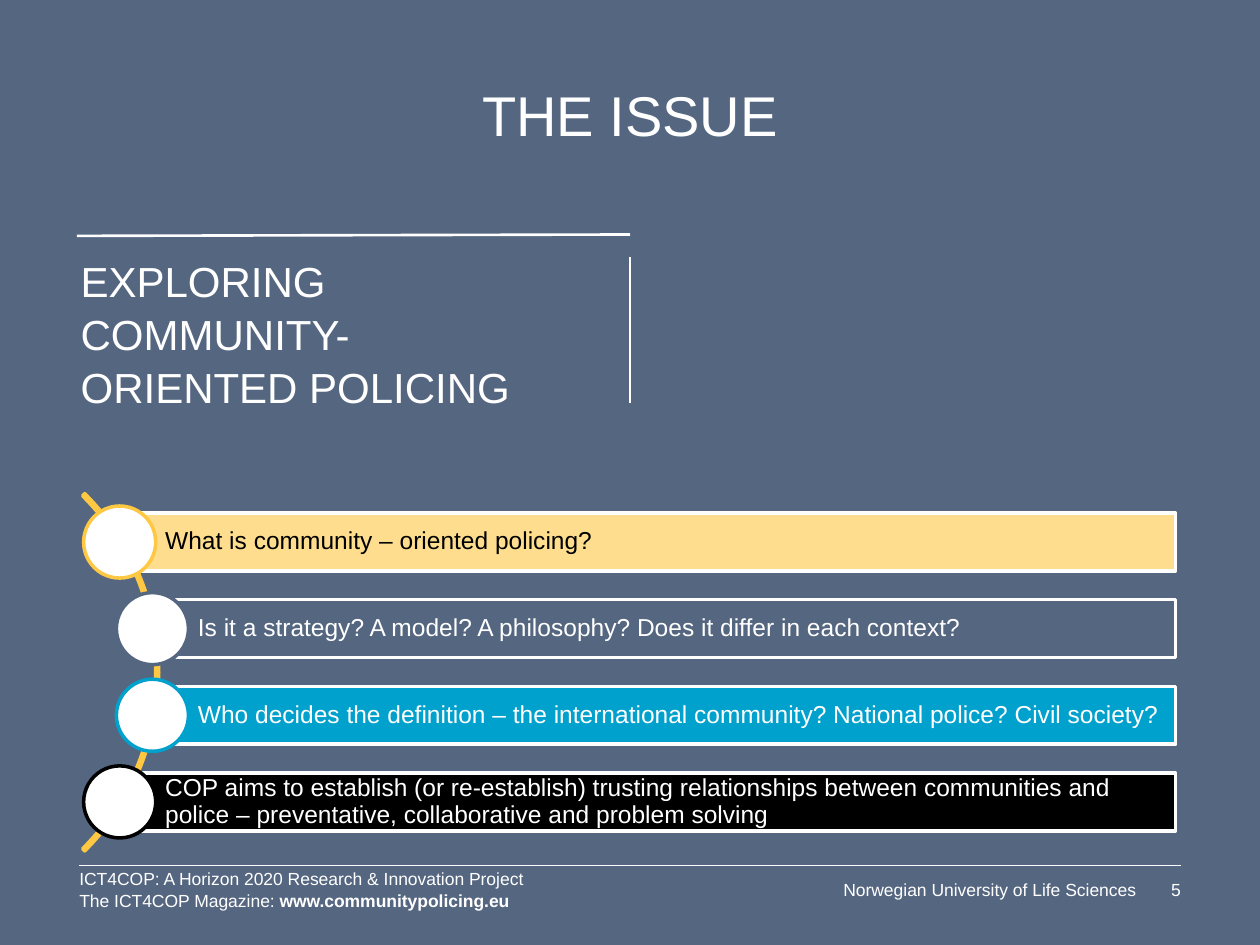
from lxml import etree
from pptx import Presentation
from pptx import util as u
from pptx.dml import color
from pptx.enum import shapes, text
from pptx.oxml import ns

WHITE, SLATE, GOLD, BLUE, BLACK = "FFFFFF", "556680", "FEC843", "00A1CD", "000000"
PALE_GOLD = "FEDE8E"
LEFT, RIGHT = 45.36, 675

# Question, bar left, bar fill, circle outline, text colour
QUESTIONS = [
    ("What is community – oriented policing?", 68.4, PALE_GOLD, GOLD, BLACK),
    ("Is it a strategy? A model? A philosophy? Does it differ in each context?",
     87.1, SLATE, SLATE, WHITE),
    ("Who decides the definition – the international community? "
     "National police? Civil society?", 87.1, BLUE, BLUE, WHITE),
    ("COP aims to establish (or re-establish) trusting relationships between "
     "communities and police – preventative, collaborative and problem solving",
     68.4, BLACK, BLACK, WHITE),
]
BAR_TOP, BAR_HEIGHT, BAR_RIGHT, BAR_PITCH = 293.2, 33.1, 671.8, 49.5
CIRCLE = 41.2


def rgb(value):
    return color.RGBColor.from_string(value)


def place(shape, left, top, width, height):
    shape.left, shape.top = u.Pt(left), u.Pt(top)
    shape.width, shape.height = u.Pt(width), u.Pt(height)


def set_frame(shape, anchor, insets=(0, 0, 0, 0)):
    frame = shape.text_frame
    frame.word_wrap = True
    frame.auto_size = text.MSO_AUTO_SIZE.NONE
    frame.vertical_anchor = anchor
    (frame.margin_left, frame.margin_top,
     frame.margin_right, frame.margin_bottom) = [u.Pt(inset) for inset in insets]
    return frame


def write(frame, paragraphs, size, hue=WHITE, align=text.PP_ALIGN.LEFT, spacing=1.0):
    """Each paragraph is a list of (words, bold) runs."""
    for index, runs in enumerate(paragraphs):
        para = frame.add_paragraph() if index else frame.paragraphs[0]
        para.alignment, para.line_spacing = align, spacing
        para.space_before = u.Pt(0)
        for words, bold in runs:
            span = para.add_run()
            span.text = words
            span.font.name, span.font.size = "Arial", u.Pt(size)
            span.font.bold = bold
            span.font.color.rgb = rgb(hue)


def add_preset(page, kind, left, top, width, height, fill, outline):
    shape = page.shapes.add_shape(
        kind, u.Pt(left), u.Pt(top), u.Pt(width), u.Pt(height))
    shape.shadow.inherit = False
    if fill:
        shape.fill.solid()
        shape.fill.fore_color.rgb = rgb(fill)
    else:
        shape.fill.background()
    shape.line.color.rgb = rgb(outline)
    shape.line.width = u.Pt(2)
    return shape


def add_rule(page, x1, y1, x2, y2, width):
    rule = page.shapes.add_connector(
        shapes.MSO_CONNECTOR.STRAIGHT, u.Pt(x1), u.Pt(y1), u.Pt(x2), u.Pt(y2))
    rule.line.color.rgb = rgb(WHITE)
    rule.line.width = u.Pt(width)
    etree.SubElement(rule._element.spPr, ns.qn("a:effectLst"))


def add_label(page, left, top, width, height, paragraphs, align):
    box = page.shapes.add_textbox(u.Pt(left), u.Pt(top), u.Pt(width), u.Pt(height))
    frame = set_frame(box, text.MSO_ANCHOR.MIDDLE)
    write(frame, paragraphs, 10, align=align, spacing=1.05)


def add_question(page, row, question, left, fill, outline, hue):
    top = BAR_TOP + row * BAR_PITCH
    bar = add_preset(page, shapes.MSO_SHAPE.RECTANGLE, left, top,
                     BAR_RIGHT - left, BAR_HEIGHT, fill, WHITE)
    frame = set_frame(bar, text.MSO_ANCHOR.MIDDLE, (26, 2.8, 2.8, 2.8))
    write(frame, [[(question, False)]], 14, hue, spacing=0.9)
    # The circle is centred on the left end of its bar
    add_preset(page, shapes.MSO_SHAPE.OVAL, left - CIRCLE / 2,
               top + (BAR_HEIGHT - CIRCLE) / 2, CIRCLE, CIRCLE, WHITE, outline)


def main():
    deck = Presentation()
    deck.slide_width, deck.slide_height = u.Pt(720), u.Pt(540)
    page = deck.slides.add_slide(deck.slide_layouts[2])
    page.background.fill.solid()
    page.background.fill.fore_color.rgb = rgb(SLATE)

    # Title and subject
    title, subject = page.placeholders
    place(title, LEFT, 45.36, RIGHT - LEFT, 38.9)
    write(set_frame(title, text.MSO_ANCHOR.BOTTOM), [[("THE ISSUE", False)]],
          32, align=text.PP_ALIGN.CENTER)
    place(subject, 46.1, 144.7, 274.3, 85.7)
    write(set_frame(subject, text.MSO_ANCHOR.TOP),
          [[("EXPLORING COMMUNITY-ORIENTED POLICING", False)]], 24, spacing=1.05)
    add_rule(page, 44, 134.8, 360, 134, 1.5)
    add_rule(page, 360, 146.9, 360, 230.4, 1.5)

    # Curved list of questions
    arc = add_preset(page, shapes.MSO_SHAPE.BLOCK_ARC, -198, 239.8, 288.7, 288.7,
                     None, GOLD)
    for index, value in enumerate((189, 27, 0.006)):
        arc.adjustments[index] = value
    for row, question in enumerate(QUESTIONS):
        add_question(page, row, *question)

    # Footer
    add_rule(page, LEFT, 494.6, RIGHT, 494.6, 1)
    add_label(page, LEFT, 495.7, 374.4, 24.5, [
        [("ICT4COP: A Horizon 2020 Research & Innovation Project", False)],
        [("The ICT4COP Magazine: ", False), ("www.communitypolicing.eu", True)],
    ], text.PP_ALIGN.LEFT)
    add_label(page, 421.2, 501.8, 227.9, 12.2,
              [[("Norwegian University of Life Sciences", False)]], text.PP_ALIGN.RIGHT)
    add_label(page, 650.9, 501.8, 23.8, 12.2, [[("5", False)]], text.PP_ALIGN.RIGHT)

    deck.save("out.pptx")


if __name__ == "__main__":
    main()
